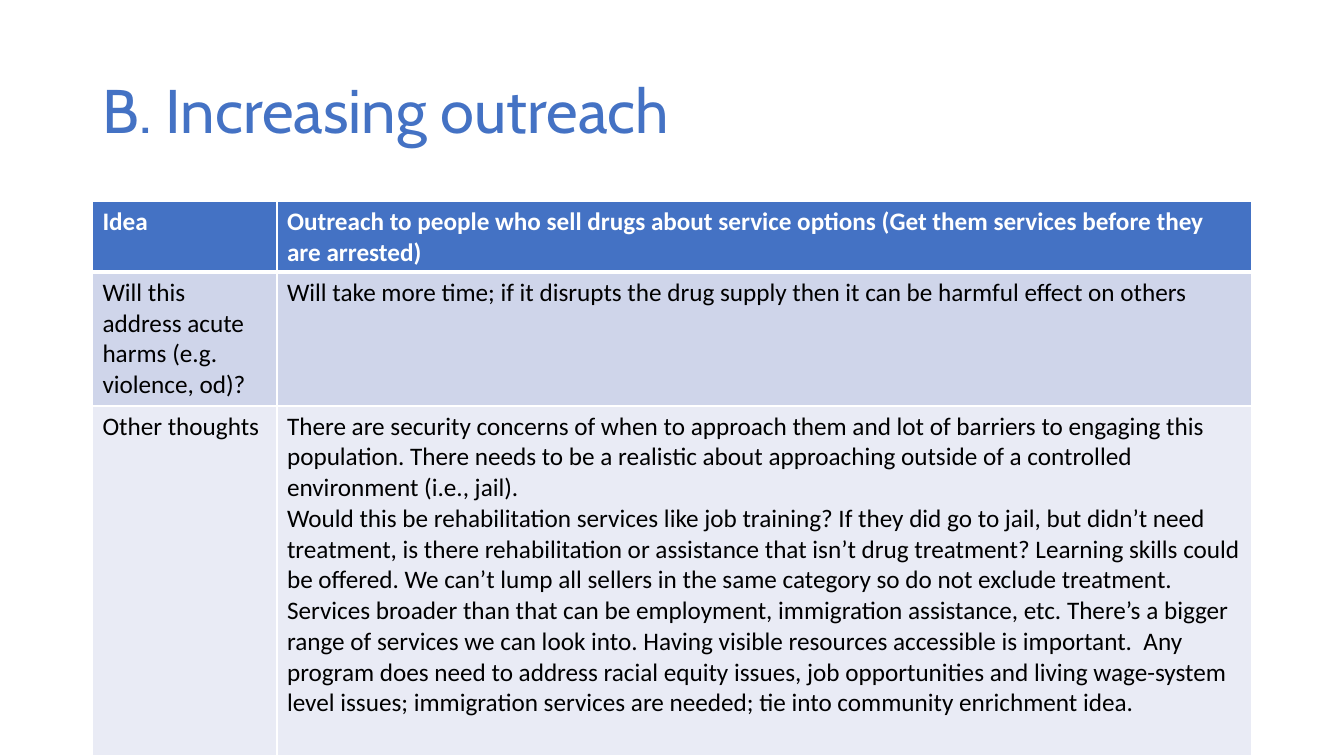
import pptx
import pptx.dml.color
import pptx.enum.text
import pptx.oxml.ns
import pptx.util
from lxml import etree
from pptx.util import Cm

BLUE = pptx.dml.color.RGBColor(0x44, 0x72, 0xC4)
BAND_DARK = pptx.dml.color.RGBColor(0xCF, 0xD5, 0xEA)
BAND_LIGHT = pptx.dml.color.RGBColor(0xE9, 0xEB, 0xF5)
WHITE = pptx.dml.color.RGBColor(0xFF, 0xFF, 0xFF)
BLACK = pptx.dml.color.RGBColor(0x00, 0x00, 0x00)

# Each row: height in cm, fill, text colour, bold, cells as lists of paragraphs
ROWS = [
    (1.78, BLUE, WHITE, True, [
        ["Idea"],
        ["Outreach to people who sell drugs about service options "
         "(Get them services before they are arrested)"],
    ]),
    (3.37, BAND_DARK, BLACK, False, [
        ["Will this address acute harms (e.g. violence, od)?"],
        ["Will take more time; if it disrupts the drug supply then it can be "
         "harmful effect on others"],
    ]),
    (8.82, BAND_LIGHT, BLACK, False, [
        ["Other thoughts"],
        ["There are security concerns of when to approach them and lot of barriers to "
         "engaging this population. There needs to be a realistic about approaching "
         "outside of a controlled environment (i.e., jail).",
         "Would this be rehabilitation services like job training? If they did go to jail, "
         "but didn’t need treatment, is there rehabilitation or assistance that isn’t drug "
         "treatment? Learning skills could be offered. We can’t lump all sellers in the same "
         "category so do not exclude treatment. Services broader than that can be employment, "
         "immigration assistance, etc. There’s a bigger range of services we can look into. "
         "Having visible resources accessible is important.  Any program does need to address "
         "racial equity issues, job opportunities and living wage-system level issues; "
         "immigration services are needed; tie into community enrichment idea."],
    ]),
]
COLUMN_WIDTHS = [4.65, 24.56]


def add_run(paragraph, text, font_name, size, color, bold=False):
    run = paragraph.add_run()
    run.text = text
    run.font.name = font_name
    run.font.size = pptx.util.Pt(size)
    run.font.color.rgb = color
    run.font.bold = bold


def add_border(cell, side, points):
    """Draw a white line on one side (L, R, T or B); call before setting the fill."""
    properties = cell._tc.get_or_add_tcPr()
    line = etree.SubElement(properties, pptx.oxml.ns.qn(f"a:ln{side}"),
                            w=str(pptx.util.Pt(points)))
    fill = etree.SubElement(line, pptx.oxml.ns.qn("a:solidFill"))
    etree.SubElement(fill, pptx.oxml.ns.qn("a:srgbClr"), val=str(WHITE))


presentation = pptx.Presentation()
presentation.slide_width = Cm(33.87)
presentation.slide_height = Cm(19.05)
slide = presentation.slides.add_slide(presentation.slide_layouts[6])

title = slide.shapes.add_textbox(Cm(2.33), Cm(1.01), Cm(29.21), Cm(3.68))
title.text_frame.word_wrap = True
title.text_frame.vertical_anchor = pptx.enum.text.MSO_ANCHOR.MIDDLE
title_paragraph = title.text_frame.paragraphs[0]
title_paragraph.line_spacing = 0.9
add_run(title_paragraph, "B. Increasing outreach", "Cabin", 44, BLUE)

table = slide.shapes.add_table(
    len(ROWS), len(COLUMN_WIDTHS), Cm(2.33), Cm(5.08),
    Cm(sum(COLUMN_WIDTHS)), Cm(sum(row[0] for row in ROWS))).table
for column, width in zip(table.columns, COLUMN_WIDTHS):
    column.width = Cm(width)

for row_index, (height, fill_color, text_color, bold, texts) in enumerate(ROWS):
    table.rows[row_index].height = Cm(height)
    for column_index, paragraphs in enumerate(texts):
        cell = table.cell(row_index, column_index)
        for side in "LRTB":
            below_header = (row_index, side) in [(0, "B"), (1, "T")]
            add_border(cell, side, 3 if below_header else 1)
        cell.fill.solid()
        cell.fill.fore_color.rgb = fill_color
        for index, text in enumerate(paragraphs):
            frame = cell.text_frame
            paragraph = frame.add_paragraph() if index else frame.paragraphs[0]
            add_run(paragraph, text, "Calibri", 18, text_color, bold)

presentation.save("out.pptx")
